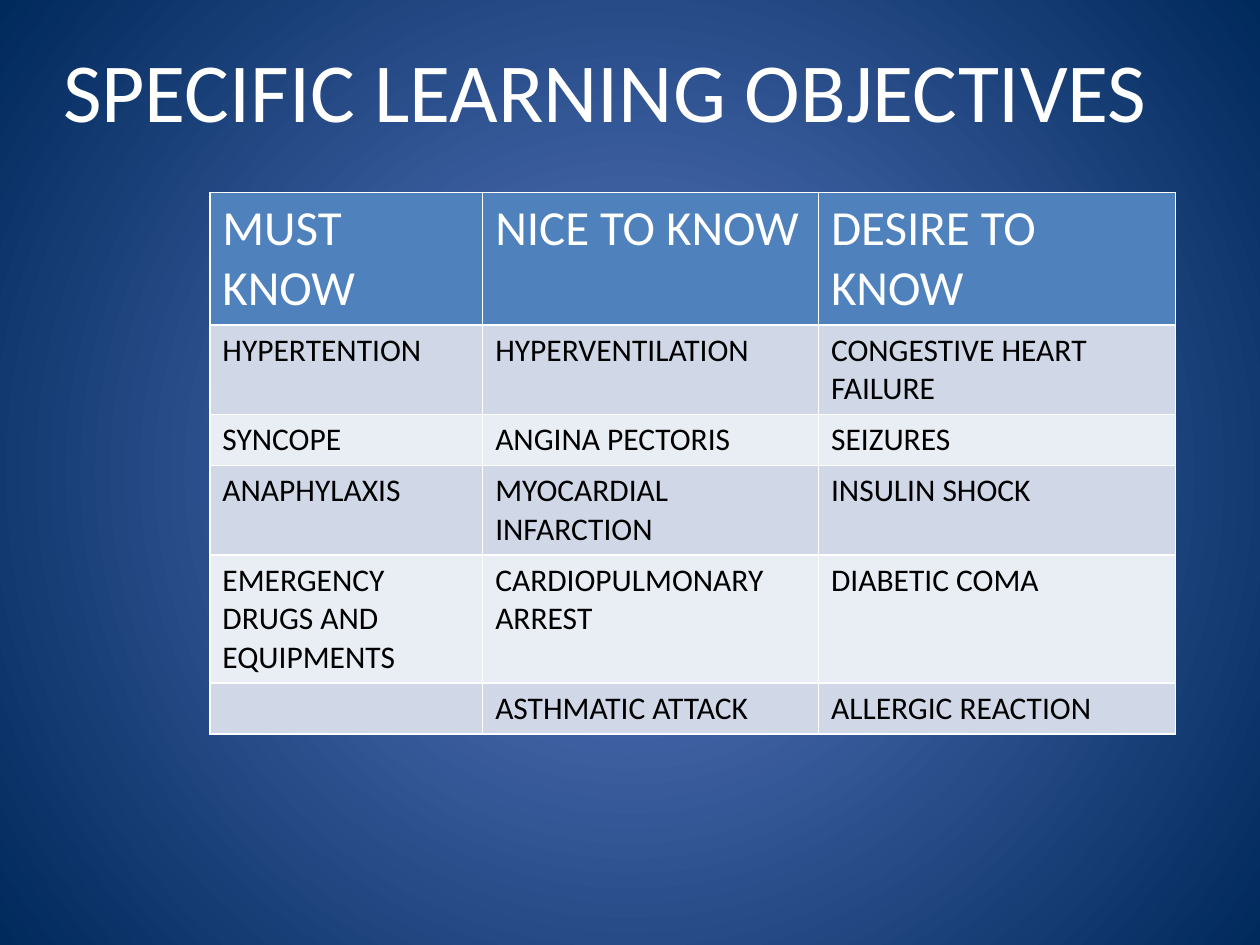
import dataclasses

import pptx
import pptx.dml.color
import pptx.enum.text
import pptx.oxml
import pptx.oxml.ns
import pptx.slide
import pptx.table
import pptx.util
from pptx.util import Cm


@dataclasses.dataclass(frozen=True)
class Theme:
    font: str = "Calibri"
    light: str = "FFFFFF"
    dark: str = "000000"
    header_fill: str = "4F81BD"
    band_fills: tuple[str, str] = ("D0D8E8", "E9EDF4")
    glow: tuple[str, str] = ("5E7CC5", "00295C")
    title_size: int = 48
    header_size: int = 28
    body_size: int = 18
    border_width: int = 1


@dataclasses.dataclass(frozen=True)
class Column:
    heading: str
    width: float
    topics: tuple[str, ...]


@dataclasses.dataclass(frozen=True)
class CellStyle:
    fill: str
    color: str
    size: int


THEME = Theme()
ROW_HEIGHT = 1.03
COLUMNS = (
    Column("MUST KNOW", 5.5, (
        "HYPERTENTION", "SYNCOPE", "ANAPHYLAXIS",
        "EMERGENCY DRUGS AND EQUIPMENTS", "")),
    Column("NICE TO KNOW", 6.77, (
        "HYPERVENTILATION", "ANGINA PECTORIS", "MYOCARDIAL INFARCTION",
        "CARDIOPULMONARY ARREST", "ASTHMATIC ATTACK")),
    Column("DESIRE TO KNOW", 7.2, (
        "CONGESTIVE HEART FAILURE", "SEIZURES", "INSULIN SHOCK",
        "DIABETIC COMA", "ALLERGIC REACTION")),
)


def rgb(color: str) -> pptx.dml.color.RGBColor:
    return pptx.dml.color.RGBColor.from_string(color)


def format_text(text_frame, size: int, color: str) -> None:
    for paragraph in text_frame.paragraphs:
        for font in [paragraph.font] + [run.font for run in paragraph.runs]:
            font.name = THEME.font
            font.size = pptx.util.Pt(size)
            font.color.rgb = rgb(color)


def paint_background(slide: pptx.slide.Slide) -> None:
    fill = slide.background.fill
    fill.gradient()
    for stop, color in zip(fill.gradient_stops, THEME.glow):
        stop.color.rgb = rgb(color)
    # Replace the linear direction by a circle around the centre
    gradient = slide.element.find(".//" + pptx.oxml.ns.qn("a:gradFill"))
    gradient.remove(gradient.find(pptx.oxml.ns.qn("a:lin")))
    gradient.append(pptx.oxml.parse_xml(
        f'<a:path {pptx.oxml.ns.nsdecls("a")} path="circle">'
        '<a:fillToRect l="50000" t="50000" r="50000" b="50000"/></a:path>'))


def add_title(slide: pptx.slide.Slide, text: str) -> None:
    title = slide.shapes.title
    title.left, title.top = Cm(1.27), Cm(0.76)
    title.width, title.height = Cm(22.86), Cm(2.06)
    frame = title.text_frame
    frame.text = text
    frame.margin_left = frame.margin_right = 0
    frame.margin_top = frame.margin_bottom = 0
    frame.word_wrap = True
    frame.auto_size = pptx.enum.text.MSO_AUTO_SIZE.NONE
    frame.vertical_anchor = pptx.enum.text.MSO_ANCHOR.MIDDLE
    frame.paragraphs[0].alignment = pptx.enum.text.PP_ALIGN.LEFT
    format_text(frame, THEME.title_size, THEME.light)


def fill_cell(cell: pptx.table._Cell, text: str, style: CellStyle) -> None:
    cell.text_frame.text = text
    format_text(cell.text_frame, style.size, style.color)
    cell.fill.solid()
    cell.fill.fore_color.rgb = rgb(style.fill)
    # Borders come before the fill in the cell properties
    properties = cell._tc.get_or_add_tcPr()
    for index, side in enumerate(("lnL", "lnR", "lnT", "lnB")):
        properties.insert(index, pptx.oxml.parse_xml(
            f'<a:{side} {pptx.oxml.ns.nsdecls("a")} '
            f'w="{pptx.util.Pt(THEME.border_width)}"><a:solidFill>'
            f'<a:srgbClr val="{THEME.light}"/></a:solidFill></a:{side}>'))


def add_objectives(slide: pptx.slide.Slide, columns: tuple[Column, ...]) -> None:
    row_count = 1 + len(columns[0].topics)
    table = slide.shapes.add_table(
        row_count, len(columns), Cm(4.23), Cm(3.88),
        Cm(sum(column.width for column in columns)),
        Cm(ROW_HEIGHT * row_count)).table
    for row in table.rows:
        row.height = Cm(ROW_HEIGHT)
    header = CellStyle(THEME.header_fill, THEME.light, THEME.header_size)
    bands = [CellStyle(fill, THEME.dark, THEME.body_size)
             for fill in THEME.band_fills]
    for column_index, column in enumerate(columns):
        table.columns[column_index].width = Cm(column.width)
        fill_cell(table.cell(0, column_index), column.heading, header)
        for topic_index, topic in enumerate(column.topics):
            fill_cell(table.cell(topic_index + 1, column_index), topic,
                      bands[topic_index % 2])
    # Plain weight in the heading row
    table.first_row = False
    table.horz_banding = False


def main() -> None:
    presentation = pptx.Presentation()
    presentation.slide_width, presentation.slide_height = Cm(25.4), Cm(19.05)
    slide = presentation.slides.add_slide(presentation.slide_layouts[5])
    paint_background(slide)
    add_title(slide, "SPECIFIC LEARNING OBJECTIVES")
    add_objectives(slide, COLUMNS)
    presentation.save("out.pptx")


if __name__ == "__main__":
    main()
